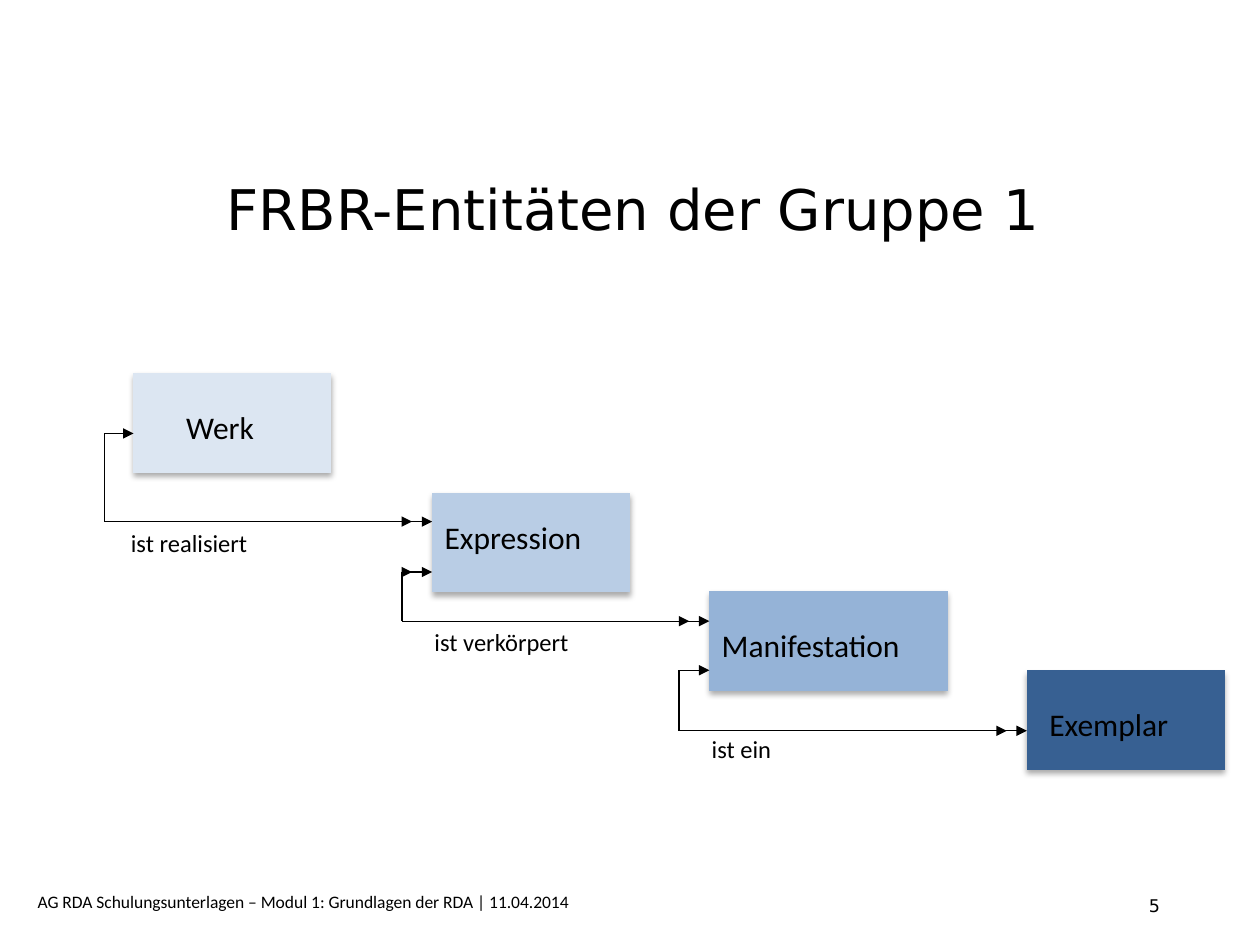
from typing import NamedTuple

from lxml import etree
from pptx import Presentation
from pptx.dml.color import RGBColor
from pptx.enum.shapes import MSO_CONNECTOR, MSO_SHAPE
from pptx.enum.text import MSO_ANCHOR
from pptx.oxml.ns import qn
from pptx.util import Inches, Pt

PROCESS = MSO_SHAPE.FLOWCHART_PROCESS
STRAIGHT = MSO_CONNECTOR.STRAIGHT
TOP = MSO_ANCHOR.TOP
MIDDLE = MSO_ANCHOR.MIDDLE
BLACK = "000000"
SANS = "DejaVu Sans"
BODY = "Calibri"
COLS, ROWS = 1000, 750
HIGH = 79


class Area(NamedTuple):
    left: float
    top: float
    width: float
    height: float


class Entity(NamedTuple):
    area: Area
    fill: str
    name: str
    text: Area


class Link(NamedTuple):
    left: float
    start: float
    end: float
    source: float
    target: float
    extra: tuple
    name: str
    text: Area


ENTITIES = [
    Entity(Area(106, 296, 157, HIGH), "DCE6F2", "Werk", Area(138, 319, 134, 40)),
    Entity(Area(343, 391, 157, HIGH), "B9CDE5", "Expression", Area(343, 406, 157, 40)),
    Entity(Area(563, 469, 189, HIGH), "95B3D7", "Manifestation", Area(563, 492, 197, 40)),
    Entity(Area(815, 532, 157, HIGH), "376092", "Exemplar", Area(823, 555, 158, 40)),
]
LINKS = [
    Link(83, 344, 414, 106, 343, ((83, 327, 414),),
         "ist realisiert", Area(94, 414, 135, 33)),
    Link(319, 454, 493, 343, 563, ((319, 327, 454), (319, 547, 493)),
         "ist verkörpert", Area(335, 493, 153, 33)),
    Link(539, 532, 580, 563, 815, ((571, 799, 580),),
         "ist ein", Area(555, 578, 79, 33)),
]

deck = Presentation()
deck.slide_width, deck.slide_height = Inches(10), Inches(7.5)
slide = deck.slides.add_slide(deck.slide_layouts[6])


def across(col: float) -> int:
    return round(deck.slide_width * col / COLS)


def down(row: float) -> int:
    return round(deck.slide_height * row / ROWS)


def place(area: Area) -> tuple:
    return across(area.left), down(area.top), across(area.width), down(area.height)


def paint(form, color: str) -> None:
    form.rgb = RGBColor.from_string(color)


def write(area: Area, text: str, size: float, font: str = BODY,
          wrap: bool = True, anchor=TOP) -> None:
    frame = slide.shapes.add_textbox(*place(area)).text_frame
    frame.text = text
    frame.word_wrap = wrap
    frame.vertical_anchor = anchor
    for run in frame.paragraphs[0].runs:
        run.font.size = Pt(size)
        run.font.name = font
        paint(run.font.color, BLACK)


def shade(shape) -> None:
    shape.shadow.inherit = False
    effects = shape._element.spPr.find(qn("a:effectLst"))
    outer = etree.SubElement(
        effects, qn("a:outerShdw"), blurRad=str(Pt(3.5)), dist=str(Pt(2.2)),
        dir="5400000", rotWithShape="0")
    color = etree.SubElement(outer, qn("a:srgbClr"), val=BLACK)
    etree.SubElement(color, qn("a:alpha"), val="32000")


def draw_box(item: Entity) -> None:
    shape = slide.shapes.add_shape(PROCESS, *place(item.area))
    shape.fill.solid()
    paint(shape.fill.fore_color, item.fill)
    shape.line.fill.background()
    shade(shape)


def draw_line(x1: float, y1: float, x2: float, y2: float, arrow: bool = True) -> None:
    line = slide.shapes.add_connector(
        STRAIGHT, across(x1), down(y1), across(x2), down(y2))
    line.line.width = Pt(0.75)
    paint(line.line.color, BLACK)
    if arrow:
        etree.SubElement(line.line._get_or_add_ln(), qn("a:tailEnd"), type="triangle")
    etree.SubElement(line._element.spPr, qn("a:effectLst"))


def draw_link(item: Link) -> None:
    draw_line(item.left, item.end, item.target, item.end)
    draw_line(item.left, item.start, item.left, item.end, arrow=False)
    draw_line(item.left, item.start, item.source, item.start)
    for start, end, row in item.extra:
        draw_line(start, row, end, row)


def main() -> None:
    write(Area(902, 705, 79, 32), "5", 10, SANS)
    write(Area(20, 702, 701, 27),
          "AG RDA Schulungsunterlagen – Modul 1: Grundlagen der RDA | 11.04.2014", 10)
    write(Area(170, 123, 830, 85), "FRBR-Entitäten der Gruppe 1", 32, SANS, anchor=MIDDLE)
    for item in ENTITIES:
        draw_box(item)
    for item in ENTITIES:
        write(item.text, item.name, 18)
    for link in LINKS:
        draw_link(link)
    for link in LINKS:
        write(link.text, link.name, 14, wrap=False)
    deck.save("out.pptx")


if __name__ == "__main__":
    main()
